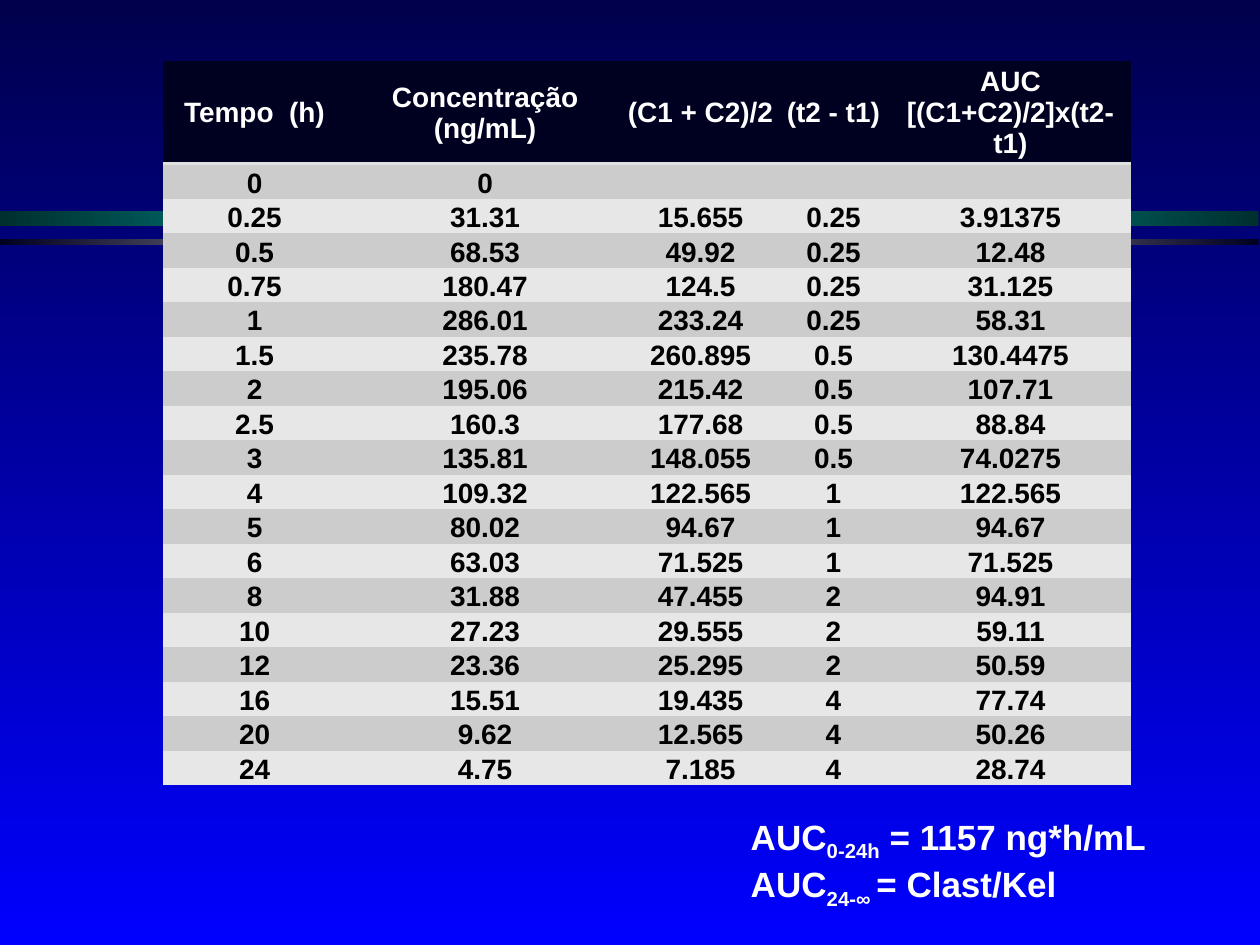
from copy import deepcopy
from dataclasses import dataclass
from typing import NamedTuple

from lxml import etree
from pptx import Presentation
from pptx.dml.color import RGBColor
from pptx.dml.fill import FillFormat
from pptx.enum.shapes import MSO_SHAPE
from pptx.enum.text import MSO_ANCHOR, PP_ALIGN
from pptx.oxml.ns import qn
from pptx.util import Inches, Pt

RECT = MSO_SHAPE.RECTANGLE
MIDDLE, BOTTOM = MSO_ANCHOR.MIDDLE, MSO_ANCHOR.BOTTOM
CENTER = PP_ALIGN.CENTER
NO_STYLE = "{2D5ABB26-0587-4C30-8999-92F81FD0307C}"
W, H = Inches(10), Inches(7.5)


@dataclass(frozen=True)
class Theme:
    font: str = "Arial"
    table_pt: int = 16
    note_pt: int = 20
    rule_pt: int = 2
    background: tuple = ("00004C", "0000FF")
    header: str = "000020"
    rule: str = "E0E0E0"
    rows: tuple = ("CCCCCD", "E7E7E8")
    light: str = "FFFFFF"
    dark: str = "000000"


class Band(NamedTuple):
    top: float
    height: float
    colors: tuple


class Piece(NamedTuple):
    text: str
    sub: bool = False


T = Theme()
BANDS = (
    Band(0.223, 0.016, ("002F2F", "00CECE", "002F2F")),
    Band(0.253, 0.006, ("000020", "F3F3F3", "000020")),
)
HEADERS = ("Tempo  (h)", "Concentração (ng/mL)", "(C1 + C2)/2", "(t2 - t1)",
           "AUC [(C1+C2)/2]x(t2-t1)")
COL_WIDTHS = (1.46, 2.2, 1.22, 0.89, 1.92)
TABLE_H, HEADER_H = 5.74, 0.81
DATA = (
    ("0", "0", "", "", ""),
    ("0.25", "31.31", "15.655", "0.25", "3.91375"),
    ("0.5", "68.53", "49.92", "0.25", "12.48"),
    ("0.75", "180.47", "124.5", "0.25", "31.125"),
    ("1", "286.01", "233.24", "0.25", "58.31"),
    ("1.5", "235.78", "260.895", "0.5", "130.4475"),
    ("2", "195.06", "215.42", "0.5", "107.71"),
    ("2.5", "160.3", "177.68", "0.5", "88.84"),
    ("3", "135.81", "148.055", "0.5", "74.0275"),
    ("4", "109.32", "122.565", "1", "122.565"),
    ("5", "80.02", "94.67", "1", "94.67"),
    ("6", "63.03", "71.525", "1", "71.525"),
    ("8", "31.88", "47.455", "2", "94.91"),
    ("10", "27.23", "29.555", "2", "59.11"),
    ("12", "23.36", "25.295", "2", "50.59"),
    ("16", "15.51", "19.435", "4", "77.74"),
    ("20", "9.62", "12.565", "4", "50.26"),
    ("24", "4.75", "7.185", "4", "28.74"),
)
RESULTS = (
    (Piece("AUC"), Piece("0-24h", True), Piece(" = 1157 ng*h/mL")),
    (Piece("AUC"), Piece("24-∞ ", True), Piece("= Clast/Kel")),
)


def rgb(color: str) -> RGBColor:
    return RGBColor.from_string(color)


def set_gradient(fill: FillFormat, colors: tuple, angle: int) -> None:
    fill.gradient()
    fill.gradient_angle = angle
    stops = fill.gradient_stops
    first = stops[0]._gs
    for _ in range(len(colors) - len(stops)):
        first.getparent().append(deepcopy(first))
    for i, (stop, color) in enumerate(zip(fill.gradient_stops, colors)):
        stop.color.rgb = rgb(color)
        stop.position = i / (len(colors) - 1)


def add_run(p, text: str, size: int, color: str, sub: bool = False) -> None:
    r = p.add_run()
    r.text = text
    r.font.name, r.font.size, r.font.bold = T.font, Pt(size), True
    r.font.color.rgb = rgb(color)
    if sub:
        r.font._element.set("baseline", "-25000")


def add_band(s, band: Band) -> None:
    sp = s.shapes.add_shape(RECT, 0, int(H * band.top), int(W * 0.999), int(H * band.height))
    sp.shadow.inherit = False
    sp.line.fill.background()
    set_gradient(sp.fill, band.colors, 0)


def add_rule(cell) -> None:
    ln = etree.Element(qn("a:lnB"), w=str(Pt(T.rule_pt)))
    solid = etree.SubElement(ln, qn("a:solidFill"))
    etree.SubElement(solid, qn("a:srgbClr"), val=T.rule)
    cell._tc.get_or_add_tcPr().insert(0, ln)


def fill_cell(cell, text: str, fill: str, color: str, anchor) -> None:
    cell.margin_left = cell.margin_right = cell.margin_top = Inches(0.01)
    cell.margin_bottom = 0
    cell.vertical_anchor = anchor
    cell.fill.solid()
    cell.fill.fore_color.rgb = rgb(fill)
    p = cell.text_frame.paragraphs[0]
    p.alignment = CENTER
    if text:
        add_run(p, text, T.table_pt, color)
    else:
        etree.SubElement(p._p, qn("a:endParaRPr"), sz=str(T.table_pt * 100))


def add_auc_table(s) -> None:
    frame = s.shapes.add_table(len(DATA) + 1, len(HEADERS), int(W * 0.129), int(H * 0.065),
                               Inches(sum(COL_WIDTHS)), Inches(TABLE_H))
    table = frame.table
    table.first_row = table.horz_banding = False
    table._tbl.tblPr.find(qn("a:tableStyleId")).text = NO_STYLE
    for col, width in zip(table.columns, COL_WIDTHS):
        col.width = Inches(width)
    for row in table.rows:
        row.height = Inches((TABLE_H - HEADER_H) / len(DATA))
    table.rows[0].height = Inches(HEADER_H)
    for j, text in enumerate(HEADERS):
        fill_cell(table.cell(0, j), text, T.header, T.light, MIDDLE)
        add_rule(table.cell(0, j))
    for i, values in enumerate(DATA):
        for j, text in enumerate(values):
            fill_cell(table.cell(i + 1, j), text, T.rows[i % 2], T.dark, BOTTOM)


def add_results(s) -> None:
    sp = s.shapes.add_textbox(int(W * 0.586), int(H * 0.856), int(W * 0.342), int(H * 0.103))
    tf = sp.text_frame
    tf.word_wrap = False
    for i, pieces in enumerate(RESULTS):
        p = tf.add_paragraph() if i else tf.paragraphs[0]
        for piece in pieces:
            add_run(p, piece.text, T.note_pt, T.light, piece.sub)


def main() -> None:
    prs = Presentation()
    prs.slide_width, prs.slide_height = W, H
    s = prs.slides.add_slide(prs.slide_layouts[6])
    set_gradient(s.background.fill, T.background, 270)
    for band in BANDS:
        add_band(s, band)
    add_auc_table(s)
    add_results(s)
    prs.save("out.pptx")


if __name__ == "__main__":
    main()
